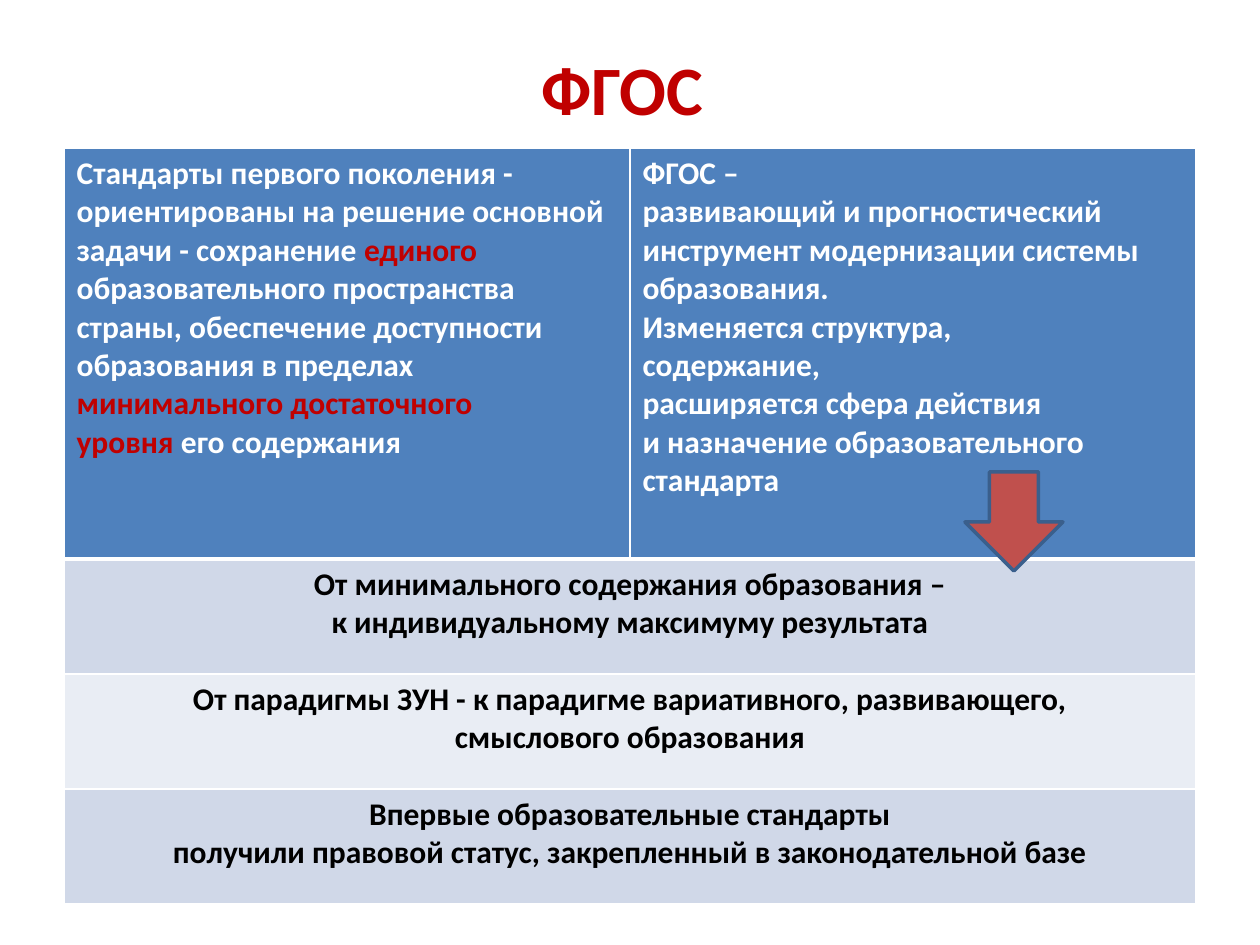
import pptx
import pptx.dml.color
import pptx.enum.shapes
import pptx.enum.text
import pptx.oxml
import pptx.oxml.ns
import pptx.util

EMU_PER_PX = 914400 / 126
ALIGN = pptx.enum.text.PP_ALIGN
ANCHOR = pptx.enum.text.MSO_ANCHOR
DOWN_ARROW = pptx.enum.shapes.MSO_SHAPE.DOWN_ARROW


class Theme:
    font = "Calibri"
    title_size, body_size = 39.6, 18
    white, black, red = "FFFFFF", "000000", "C00000"
    header, band_dark, band_light = "4F81BD", "D0D8E8", "E9EDF4"
    arrow, arrow_line = "C0504D", "3A5F8C"


def px(n):
    return pptx.util.Emu(round(n * EMU_PER_PX))


def rgb(color):
    return pptx.dml.color.RGBColor.from_string(color)


class SlideBuilder:
    def __init__(self, prs, theme):
        self.theme = theme
        self.slide = prs.slides.add_slide(prs.slide_layouts[6])

    def fill_text(self, tf, lines, size, color, align):
        """Fill a text frame; a line is a list of runs, and every second run is accented."""
        for i, line in enumerate(lines):
            p = tf.paragraphs[0] if i == 0 else tf.add_paragraph()
            p.alignment = align
            for k, text in enumerate(line):
                if not text:
                    continue
                r = p.add_run()
                r.text = text
                r.font.name = self.theme.font
                r.font.size = pptx.util.Pt(size)
                r.font.bold = True
                r.font.color.rgb = rgb(self.theme.red if k % 2 else color)

    def title(self, text, *box):
        tf = self.slide.shapes.add_textbox(*map(px, box)).text_frame
        tf.word_wrap = True
        tf.vertical_anchor = ANCHOR.MIDDLE
        self.fill_text(tf, [[text]], self.theme.title_size, self.theme.red, ALIGN.CENTER)

    def table(self, left, top, col_widths, row_heights):
        frame = self.slide.shapes.add_table(
            len(row_heights), len(col_widths), px(left), px(top),
            px(sum(col_widths)), px(sum(row_heights)))
        for col, w in zip(frame.table.columns, col_widths):
            col.width = px(w)
        for row, h in zip(frame.table.rows, row_heights):
            row.height = px(h)
        return frame.table

    def cell_text(self, cell, lines, color, align):
        self.fill_text(cell.text_frame, lines, self.theme.body_size, color, align)

    def cell_style(self, cell, fill, top=1, bottom=1):
        cell.fill.solid()
        cell.fill.fore_color.rgb = rgb(fill)
        tc_pr = cell._tc.get_or_add_tcPr()
        widths = {"lnL": 1, "lnR": 1, "lnT": top, "lnB": bottom}
        for i, (tag, width) in enumerate(widths.items()):
            ln = pptx.oxml.parse_xml(
                f'<a:{tag} {pptx.oxml.ns.nsdecls("a")} w="{int(pptx.util.Pt(width))}">'
                f'<a:solidFill><a:srgbClr val="{self.theme.white}"/></a:solidFill></a:{tag}>')
            tc_pr.insert(i, ln)

    def shape(self, kind, fill, line, width, *box):
        sp = self.slide.shapes.add_shape(kind, *map(px, box))
        sp.shadow.inherit = False
        sp.fill.solid()
        sp.fill.fore_color.rgb = rgb(fill)
        sp.line.color.rgb = rgb(line)
        sp.line.width = pptx.util.Pt(width)


HEADERS = [
    [["Стандарты первого поколения -"],
     ["ориентированы на решение основной"],
     ["задачи - сохранение ", "единого"],
     ["образовательного пространства"],
     ["страны, обеспечение доступности"],
     ["образования в пределах"],
     ["", "минимального достаточного"],
     ["", "уровня", " его содержания"]],
    [["ФГОС –"],
     ["развивающий и прогностический"],
     ["инструмент модернизации системы"],
     ["образования."],
     ["Изменяется структура,"],
     ["содержание,"],
     ["расширяется сфера действия"],
     ["и назначение образовательного"],
     ["стандарта"]],
]
SHIFTS = [
    [["От минимального содержания образования –"],
     ["к индивидуальному максимуму результата"]],
    [["От парадигмы ЗУН - к парадигме вариативного, развивающего,"],
     ["смыслового образования"]],
    [["Впервые образовательные стандарты"],
     ["получили правовой статус, закрепленный в законодательной базе"]],
]


def main():
    prs = pptx.Presentation()
    prs.slide_width, prs.slide_height = px(1260), px(945)
    theme = Theme()
    s = SlideBuilder(prs, theme)

    s.title("ФГОС ", 63, 38, 1134, 100)

    table = s.table(64, 148, [566] * len(HEADERS), [411] + [115] * len(SHIFTS))
    for col, lines in enumerate(HEADERS):
        cell = table.cell(0, col)
        s.cell_text(cell, lines, theme.white, ALIGN.LEFT)
        s.cell_style(cell, theme.header, bottom=3)
    for row, lines in enumerate(SHIFTS, start=1):
        first, last = table.cell(row, 0), table.cell(row, 1)
        first.merge(last)
        s.cell_text(first, lines, theme.black, ALIGN.CENTER)
        for cell in (first, last):
            s.cell_style(cell, theme.band_dark if row % 2 else theme.band_light,
                         top=3 if row == 1 else 1)

    s.shape(DOWN_ARROW, theme.arrow, theme.arrow_line, 2, 965, 472, 98, 99)
    prs.save("out.pptx")


if __name__ == "__main__":
    main()
